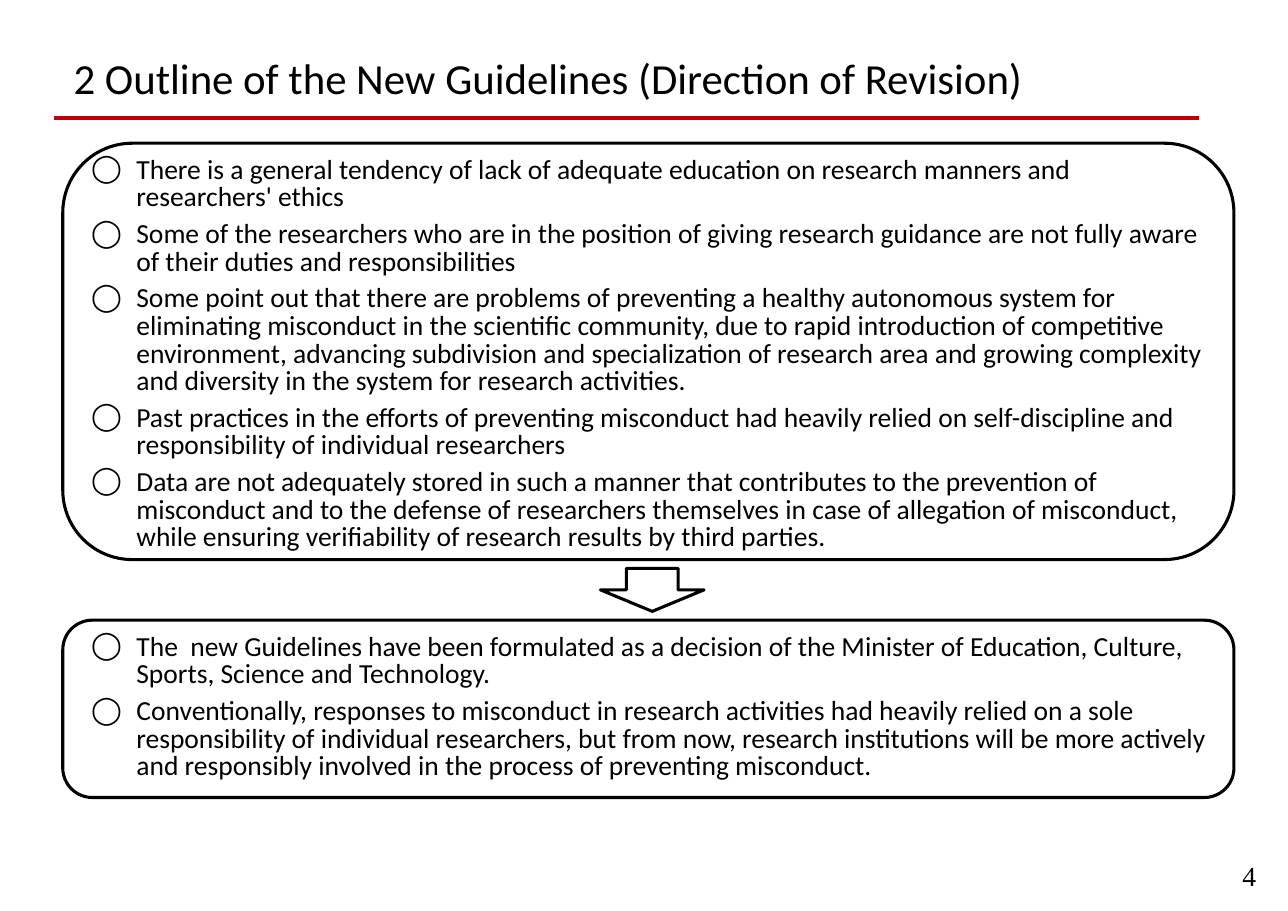
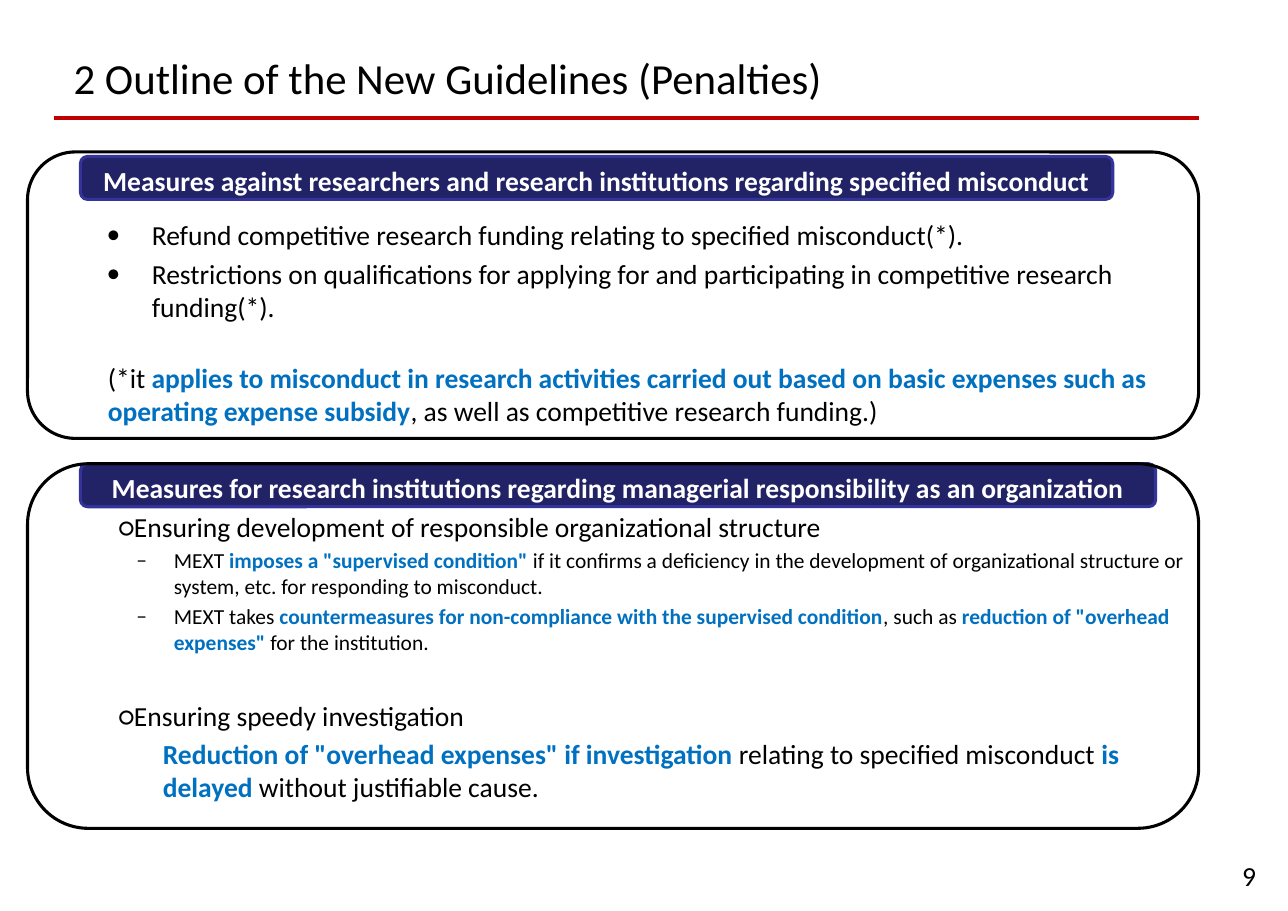
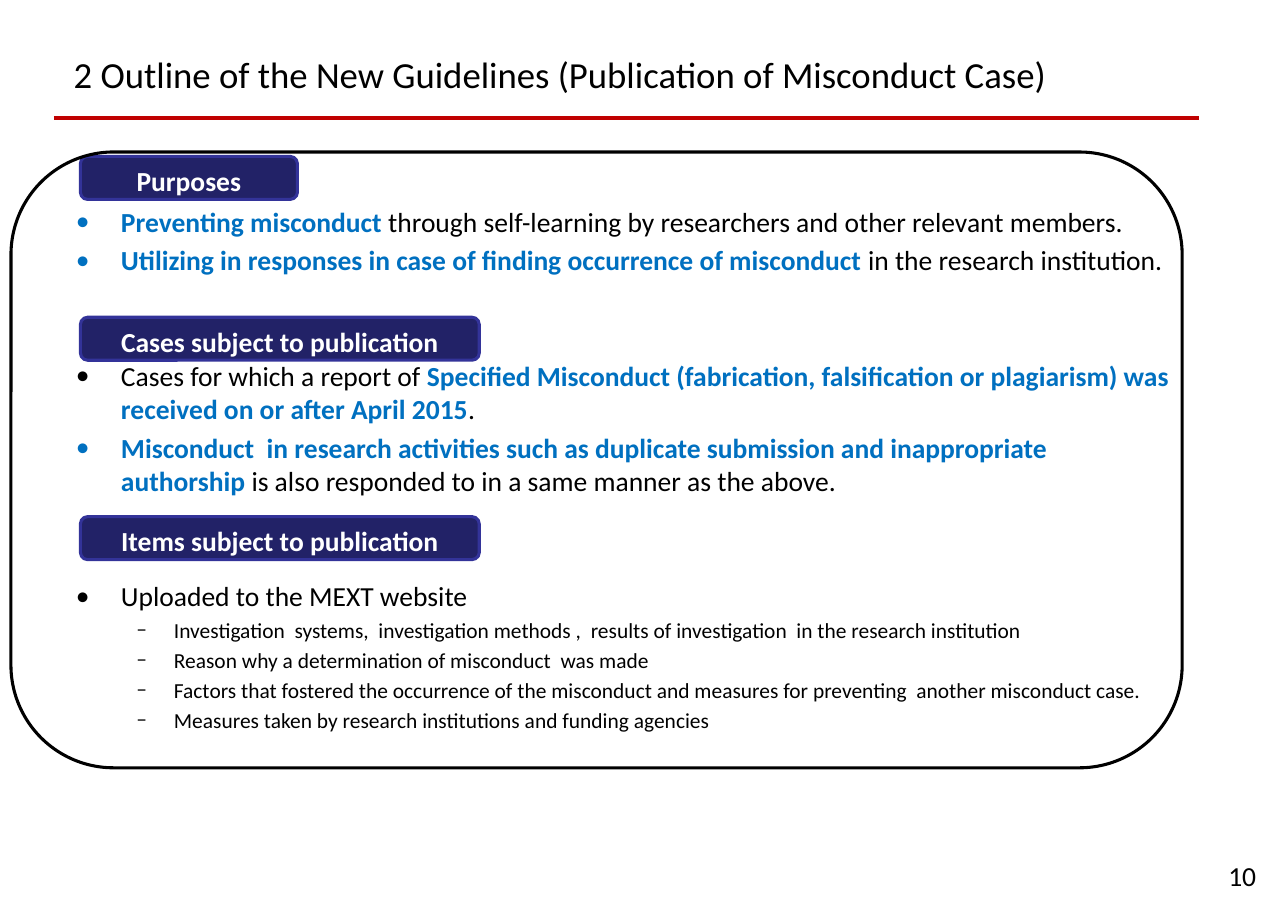
"""Builds three slides on the new research misconduct guidelines."""
from pptx import Presentation
from pptx.dml.color import RGBColor
from pptx.enum.shapes import MSO_CONNECTOR as CONNECTOR, MSO_SHAPE as SHAPE
from pptx.enum.text import MSO_ANCHOR as ANCHOR, PP_ALIGN as ALIGN
from pptx.oxml.xmlchemy import OxmlElement
from pptx.util import Emu, Pt

EMU_PER_PX = 9144
CIRCLE = dict(bullet="◯", indent=41, hang=41, leading=18, before=3, after=3)
DASH = dict(bullet="–", indent=89, hang=34, size=14, level=1)


def px(length):
    return Emu(length * EMU_PER_PX)


def color(value):
    return RGBColor.from_string(value)


def write(frame, text, size=18, font="Calibri", ink="000000", accent="0070C0", bold=False,
          align=ALIGN.LEFT, bullet=None, indent=0, hang=0, level=0,
          leading=None, before=None, after=0):
    first = not frame.paragraphs[0].runs
    paragraph = frame.paragraphs[0] if first else frame.add_paragraph()
    properties = paragraph._p.get_or_add_pPr()
    properties.set("marL", str(px(indent)))
    properties.set("indent", str(px(-hang)))
    if bullet:
        for tag, key, value in (("a:buFont", "typeface", font), ("a:buChar", "char", bullet)):
            mark = OxmlElement(tag)
            mark.set(key, value)
            properties.append(mark)
    paragraph.level = level
    paragraph.alignment = align
    if leading:
        paragraph.line_spacing = Pt(leading)
    gap = round(size * 0.2, 1) if before is None else before
    paragraph.space_before = Pt(0 if first else gap)
    paragraph.space_after = Pt(after)
    for position, part in enumerate(text.split("|")):
        if part:
            emphasis = position % 2 == 1
            run = paragraph.add_run()
            run.text = part
            run.font.size = Pt(size)
            run.font.name = font
            run.font.bold = bold or emphasis
            run.font.color.rgb = color(accent if emphasis else ink)


class Deck:
    def __init__(self):
        self.presentation = Presentation()
        self.presentation.slide_width = px(1169)
        self.presentation.slide_height = px(827)
        self.slide = None

    def start(self, title, number, title_size=28, number_font="Calibri"):
        layout = self.presentation.slide_layouts[6]
        self.slide = self.presentation.slides.add_slide(layout)
        self.rule(49, 107, 1088)
        self.text(57, 42, 1095, 57, [(title, dict(size=title_size))])
        self.text(1074, 775, 76, 33, [(number, dict(font=number_font, align=ALIGN.RIGHT))])

    def rule(self, left, top, right):
        line = self.slide.shapes.add_connector(
            CONNECTOR.STRAIGHT, px(left), px(top), px(right), px(top))
        line.line.color.rgb = color("C00000")
        line.line.width = Pt(3)
        line._element.spPr.append(OxmlElement("a:effectLst"))

    def text(self, left, top, width, height, paragraphs):
        frame = self.slide.shapes.add_textbox(
            px(left), px(top), px(width), px(height)).text_frame
        frame.word_wrap = True
        for content, style in paragraphs:
            write(frame, content, **style)

    def shape(self, kind, left, top, width, height, fill=None, line="000000"):
        shape = self.slide.shapes.add_shape(kind, px(left), px(top), px(width), px(height))
        shape.shadow.inherit = False
        if fill:
            shape.fill.solid()
            shape.fill.fore_color.rgb = color(fill)
        else:
            shape.fill.background()
        shape.line.color.rgb = color(line)
        shape.line.width = Pt(2)
        return shape

    def panel(self, left, top, height):
        self.shape(SHAPE.ROUNDED_RECTANGLE, left, top, 1063, height)

    def arrow(self, left, top, width, height):
        self.shape(SHAPE.DOWN_ARROW, left, top, width, height, fill="FFFFFF")

    def heading(self, top, width, content):
        band = self.shape(SHAPE.ROUNDED_RECTANGLE, 73, top, width, 39,
                          fill="222267", line="333399")
        frame = band.text_frame
        frame.word_wrap = True
        frame.vertical_anchor = ANCHOR.TOP
        frame.margin_top = px(5)
        frame.margin_bottom = px(0)
        write(frame, content, ink="FFFFFF", bold=True, align=ALIGN.CENTER)


def add_direction(deck):
    deck.start("2 Outline of the New Guidelines (Direction of Revision)", "4",
               number_font="Times New Roman")
    problems = [
        "There is a general tendency of lack of adequate education on research manners "
        "and researchers' ethics",
        "Some of the researchers who are in the position of giving research guidance are "
        "not fully aware of their duties and responsibilities",
        "Some point out that there are problems of preventing a healthy autonomous system "
        "for eliminating misconduct in the scientific community, due to rapid introduction "
        "of competitive environment, advancing subdivision and specialization of research "
        "area and growing complexity and diversity in the system for research activities.",
        "Past practices in the efforts of preventing misconduct had heavily relied on "
        "self-discipline and responsibility of individual researchers",
        "Data are not adequately stored in such a manner that contributes to the prevention "
        "of misconduct and to the defense of researchers themselves in case of allegation of "
        "misconduct, while ensuring verifiability of research results by third parties.",
    ]
    responses = [
        "The  new Guidelines have been formulated as a decision of the Minister of "
        "Education, Culture, Sports, Science and Technology.",
        "Conventionally, responses to misconduct in research activities had heavily relied "
        "on a sole responsibility of individual researchers, but from now, research "
        "institutions will be more actively and responsibly involved in the process of "
        "preventing misconduct.",
    ]
    for top, height, items in ((138, 370, problems), (571, 150, responses)):
        deck.text(73, top, 1036, height, [(item, CIRCLE) for item in items])
    deck.arrow(545, 516, 94, 39)
    deck.panel(57, 130, 378)
    deck.panel(57, 563, 161)


def add_penalties(deck):
    deck.start("2 Outline of the New Guidelines (Penalties)", "9")
    dot = dict(bullet="•", indent=69, hang=41)
    deck.text(59, 193, 1030, 200, [
        ("Refund competitive research funding relating to specified misconduct(*).", dot),
        ("Restrictions on qualifications for applying for and participating in competitive "
         "research funding(*).", dot),
        ("(*it |applies to misconduct in research activities carried out based on basic "
         "expenses such as operating expense subsidy|, as well as competitive research "
         "funding.)", dict(indent=29, before=25)),
    ])
    deck.text(59, 458, 1030, 290, [
        ("○Ensuring development of responsible organizational structure", dict(indent=39)),
        ("MEXT |imposes a \"supervised condition\"| if it confirms a deficiency in the "
         "development of organizational structure or system, etc. for responding to "
         "misconduct.", DASH),
        ("MEXT takes |countermeasures for non-compliance with the supervised condition|, "
         "such as |reduction of \"overhead expenses\"| for the institution.", DASH),
        ("○Ensuring speedy investigation", dict(indent=39, before=29)),
        ("|Reduction of \"overhead expenses\" if investigation| relating to specified "
         "misconduct |is delayed| without justifiable cause.", dict(indent=79)),
    ])
    deck.heading(142, 937, "Measures against researchers and research institutions "
                           "regarding specified misconduct")
    deck.heading(421, 976, "Measures for research institutions regarding managerial "
                           "responsibility as an organization")
    deck.panel(25, 138, 260)
    deck.panel(25, 421, 331)


def add_publication(deck):
    deck.start("2 Outline of the New Guidelines (Publication of Misconduct Case)", "10",
               title_size=24)
    dot = dict(bullet="•", indent=41, hang=41)
    purposes = [
        ("|Preventing misconduct| through self-learning by researchers and other relevant "
         "members.", dot),
        ("|Utilizing in responses in case of finding occurrence of misconduct |in the "
         "research institution.", dot),
    ]
    cases = [
        ("Cases for which a report of |Specified Misconduct (fabrication, falsification or "
         "plagiarism) was received on or after April 2015|.", dot),
        ("|Misconduct  in research activities such as duplicate submission and inappropriate "
         "authorship |is also responded to in a same manner as the above.", dot),
    ]
    published = [
        ("Uploaded to the MEXT website", dot),
        ("Investigation  systems,  investigation methods ,  results of investigation  in the "
         "research institution", DASH),
        ("Reason why a determination of misconduct  was made", DASH),
        ("Factors that fostered the occurrence of the misconduct and measures for "
         "preventing  another misconduct case.", DASH),
        ("Measures taken by research institutions and funding agencies", DASH),
    ]
    for top, height, items in ((181, 75, purposes), (321, 140, cases), (521, 155, published)):
        deck.text(59, top, 1014, height, items)
    deck.heading(142, 197, "Purposes")
    deck.heading(288, 362, "Cases subject to publication")
    deck.heading(469, 362, "Items subject to publication")
    deck.panel(10, 138, 559)


def main():
    deck = Deck()
    add_direction(deck)
    add_penalties(deck)
    add_publication(deck)
    deck.presentation.save("out.pptx")


if __name__ == "__main__":
    main()
